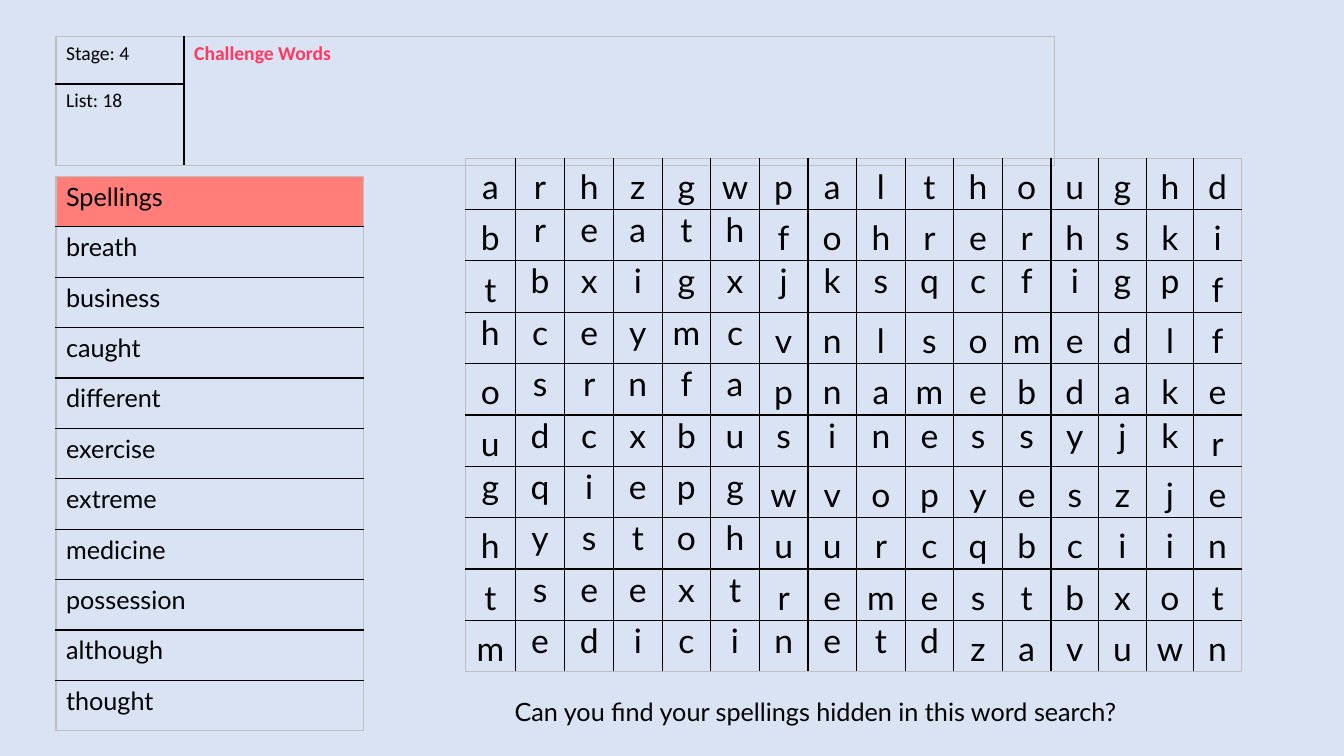
from dataclasses import dataclass
from lxml.etree import SubElement
from pptx import Presentation
from pptx.dml.color import RGBColor
from pptx.enum.text import PP_ALIGN
from pptx.oxml.ns import qn
from pptx.util import Pt


@dataclass(frozen=True)
class Theme:
    """Colours, fonts and type sizes of the slide."""
    back: str = "DAE3F3"
    ink: str = "000000"
    edge: str = "BFBFBF"
    head: str = "FF7E79"
    hot: str = "FF3860"
    main: str = "Lato"
    alt: str = "Calibri"
    small: int = 14
    body: int = 18
    big: int = 24


THEME = Theme()

WORDS = ["Spellings", "breath", "business", "caught", "different", "exercise",
         "extreme", "medicine", "possession", "although", "thought"]

LINES = ["arhzgwpalthoughd", "breathfohrerhski", "tbxigxjksqcfigpf",
         "hceymcvnlsomedlf", "osrnfapnamebdake", "udcxbusinessyjkr",
         "gqiepgwvopyeszji"[:15] + "e", "hystohuurcqbciin", "tseextremestbxot",
         "medicinetdzavuwn"]

TIGHT = [(0, 0), (1, 6), (1, 15), (0, 6), (1, 6),
         (1, 15), (0, 6), (1, 6), (1, 6), (1, 10)]


def style(para, font, size, color=THEME.ink, bold=False):
    """Format every run of a paragraph."""
    for run in para.runs:
        run.font.name = font
        run.font.size = Pt(size)
        run.font.bold = bold
        run.font.color.rgb = RGBColor.from_string(color)


def border(cell, colors):
    """Draw the left, right, top and bottom lines of a cell."""
    props = cell._tc.get_or_add_tcPr()
    for side, color in zip("LRTB", colors):
        line = SubElement(props, qn(f"a:ln{side}"), w=str(Pt(1)))
        fill = SubElement(line, qn("a:solidFill"))
        SubElement(fill, qn("a:srgbClr"), val=color)


def rule(table):
    """Clear the cell fills, with dark inner lines and a pale frame."""
    rows, cols = len(table.rows), len(table.columns)
    for r in range(rows):
        for c in range(cols):
            cell = table.cell(r, c)
            if not cell.is_spanned:
                high = cell.span_height if cell.is_merge_origin else 1
                outer = (c == 0, c == cols - 1, r == 0, r + high == rows)
                border(cell, [THEME.edge if out else THEME.ink for out in outer])
            cell.fill.background()


def grid(slide, box, wide, high):
    """Add a plain table with the given column widths and row heights."""
    left, top = box
    frame = slide.shapes.add_table(len(high), len(wide), Pt(left), Pt(top),
                                   Pt(sum(wide)), Pt(sum(high)))
    table = frame.table
    table.first_row = table.horz_banding = False
    for col, width in zip(table.columns, wide):
        col.width = Pt(width)
    for row, height in zip(table.rows, high):
        row.height = Pt(height)
    return table


def write(cell, text, font, size, color=THEME.ink, bold=False):
    """Put styled text in a cell and return its paragraph."""
    para = cell.text_frame.paragraphs[0]
    para.text = text
    style(para, font, size, color, bold)
    return para


def banner(slide, box):
    """Add the stage, list and challenge heading."""
    table = grid(slide, box, [91.5, 621.5], [34, 58.5])
    table.cell(0, 1).merge(table.cell(1, 1))
    rule(table)
    write(table.cell(0, 0), "Stage: 4", THEME.alt, THEME.small)
    write(table.cell(1, 0), "List: 18", THEME.alt, THEME.small)
    write(table.cell(0, 1), "Challenge Words", THEME.alt, THEME.small,
          THEME.hot, True)


def spell(slide, box):
    """Add the list of spellings."""
    table = grid(slide, box, [219.5], [36] * len(WORDS))
    rule(table)
    for r, word in enumerate(WORDS):
        write(table.cell(r, 0), word, THEME.main, THEME.body)
    head = table.cell(0, 0).fill
    head.solid()
    head.fore_color.rgb = RGBColor.from_string(THEME.head)


def search(slide, box):
    """Add the word search, with looser spacing outside the tight cells."""
    wide = [35.5, 35.5] + [34.75] * 10 + [34] * 4
    table = grid(slide, box, wide, [36.7] * len(LINES))
    rule(table)
    for r, (line, (start, stop)) in enumerate(zip(LINES, TIGHT)):
        for c, char in enumerate(line):
            cell = table.cell(r, c)
            cell.margin_left = cell.margin_right = Pt(5)
            cell.margin_top = cell.margin_bottom = 0
            para = write(cell, char, THEME.main, THEME.big)
            para.alignment = PP_ALIGN.CENTER
            if not start <= c < stop:
                para.line_spacing = 1.2
                para.space_after = Pt(10)


def prompt(slide, box):
    """Add the question under the word search."""
    shape = slide.shapes.add_textbox(*map(Pt, box))
    frame = shape.text_frame
    frame.word_wrap = True
    frame.text = "Can you find your spellings hidden in this word search?"
    style(frame.paragraphs[0], THEME.main, THEME.body)


def main():
    """Build and save the slide."""
    deck = Presentation()
    deck.slide_width, deck.slide_height = Pt(960), Pt(540)
    slide = deck.slides.add_slide(deck.slide_layouts[6])
    fill = slide.background.fill
    fill.solid()
    fill.fore_color.rgb = RGBColor.from_string(THEME.back)
    spell(slide, (40, 126))
    banner(slide, (40, 26))
    search(slide, (332.5, 113))
    prompt(slide, (360.5, 493.5, 599, 29))
    deck.save("out.pptx")


if __name__ == "__main__":
    main()
